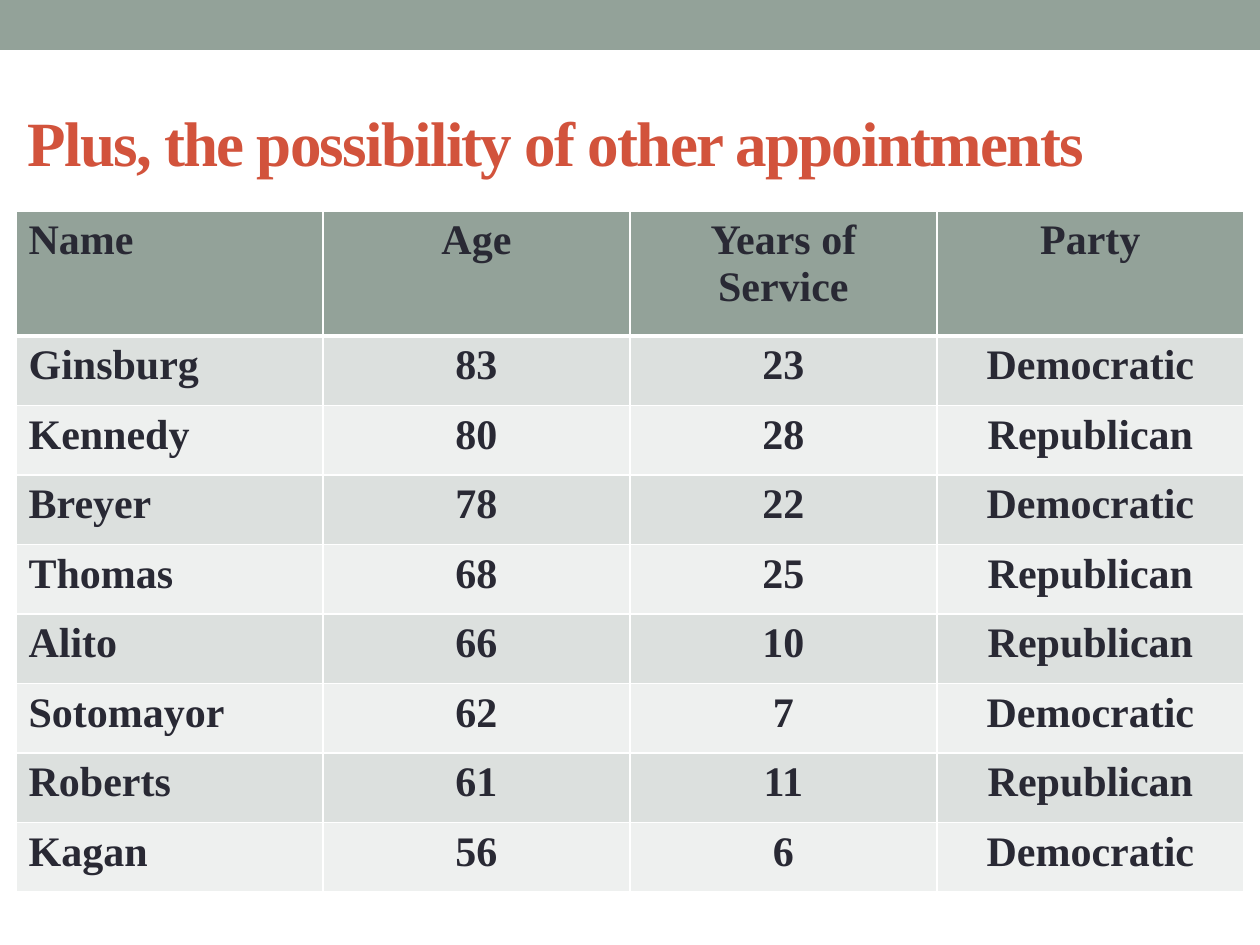
from lxml import etree
from pptx import Presentation
from pptx import util as u
from pptx.dml.color import RGBColor
from pptx.enum import shapes, text
from pptx.oxml.ns import qn

SCALE = 914400 / 126  # EMU in one px
FONT = "Times New Roman"
SAGE, RUST, INK, WHITE = "93A299", "D2533C", "292934", "FFFFFF"
BANDS = ("DCE0DE", "EEF0EF")

HEADINGS = ("Name", "Age", "Years of Service", "Party")
JUSTICES = (
    ("Ginsburg", 83, 23, "Democratic"),
    ("Kennedy", 80, 28, "Republican"),
    ("Breyer", 78, 22, "Democratic"),
    ("Thomas", 68, 25, "Republican"),
    ("Alito", 66, 10, "Republican"),
    ("Sotomayor", 62, 7, "Democratic"),
    ("Roberts", 61, 11, "Republican"),
    ("Kagan", 56, 6, "Democratic"),
)


def px(length):
    return u.Emu(round(length * SCALE))


def color(value):
    return RGBColor.from_string(value)


def write(frame, words, size, ink, align=text.PP_ALIGN.LEFT, spacing=None):
    paragraph = frame.paragraphs[0]
    paragraph.alignment = align
    run = paragraph.add_run()
    run.text = str(words)
    run.font.name = FONT
    run.font.size = u.Pt(size)
    run.font.bold = True
    run.font.color.rgb = color(ink)
    if spacing is not None:
        run.font._element.set("spc", str(spacing * 100))


def set_borders(cell, bottom):
    properties = cell._tc.get_or_add_tcPr()
    for side, width in (("L", 1), ("R", 1), ("T", 1), ("B", bottom)):
        line = etree.SubElement(properties, qn(f"a:ln{side}"), w=str(u.Pt(width)))
        fill = etree.SubElement(line, qn("a:solidFill"))
        etree.SubElement(fill, qn("a:srgbClr"), val=WHITE)


def add_band(slide, left, top, width, height):
    band = slide.shapes.add_shape(
        shapes.MSO_SHAPE.RECTANGLE, px(left), px(top), px(width), px(height))
    band.shadow.inherit = False
    band.fill.solid()
    band.fill.fore_color.rgb = color(SAGE)
    band.line.fill.background()


def place_title(slide, left, top, width, height):
    title = slide.shapes.title
    title.left, title.top = px(left), px(top)
    title.width, title.height = px(width), px(height)
    frame = title.text_frame
    frame.word_wrap = True
    frame.auto_size = text.MSO_AUTO_SIZE.NONE
    frame.vertical_anchor = text.MSO_ANCHOR.MIDDLE
    write(frame, "Plus, the possibility of other appointments", 36, RUST, spacing=-1)


def add_justices(slide, left, top, width, height, header_height=125):
    rows = (HEADINGS,) + JUSTICES
    table = slide.shapes.add_table(
        len(rows), len(HEADINGS), px(left), px(top), px(width), px(height)).table
    table.horz_banding = False
    for column in table.columns:
        column.width = px(width / len(HEADINGS))

    # Header row, then equal body rows in alternating bands
    body_height = (height - header_height) / len(JUSTICES)
    for i, values in enumerate(rows):
        table.rows[i].height = px(body_height if i else header_height)
        for j, value in enumerate(values):
            cell = table.cell(i, j)
            # The thick rule under the header belongs to its bottom edge
            set_borders(cell, bottom=1 if i else 3)
            if i == 1:
                cell._tc.tcPr.find(qn("a:lnT")).set("w", str(u.Pt(3)))
            cell.fill.solid()
            cell.fill.fore_color.rgb = color(BANDS[(i - 1) % 2] if i else SAGE)
            write(cell.text_frame, value, 24, INK,
                  align=text.PP_ALIGN.CENTER if j else text.PP_ALIGN.LEFT)


def main():
    presentation = Presentation()
    presentation.slide_width, presentation.slide_height = px(1260), px(945)
    slide = presentation.slides.add_slide(presentation.slide_layouts[5])
    add_band(slide, 0, 0, 1260, 50)
    place_title(slide, 15, 73, 1134, 136)
    add_justices(slide, 16, 211, 1228, 681)
    presentation.save("out.pptx")


if __name__ == "__main__":
    main()
